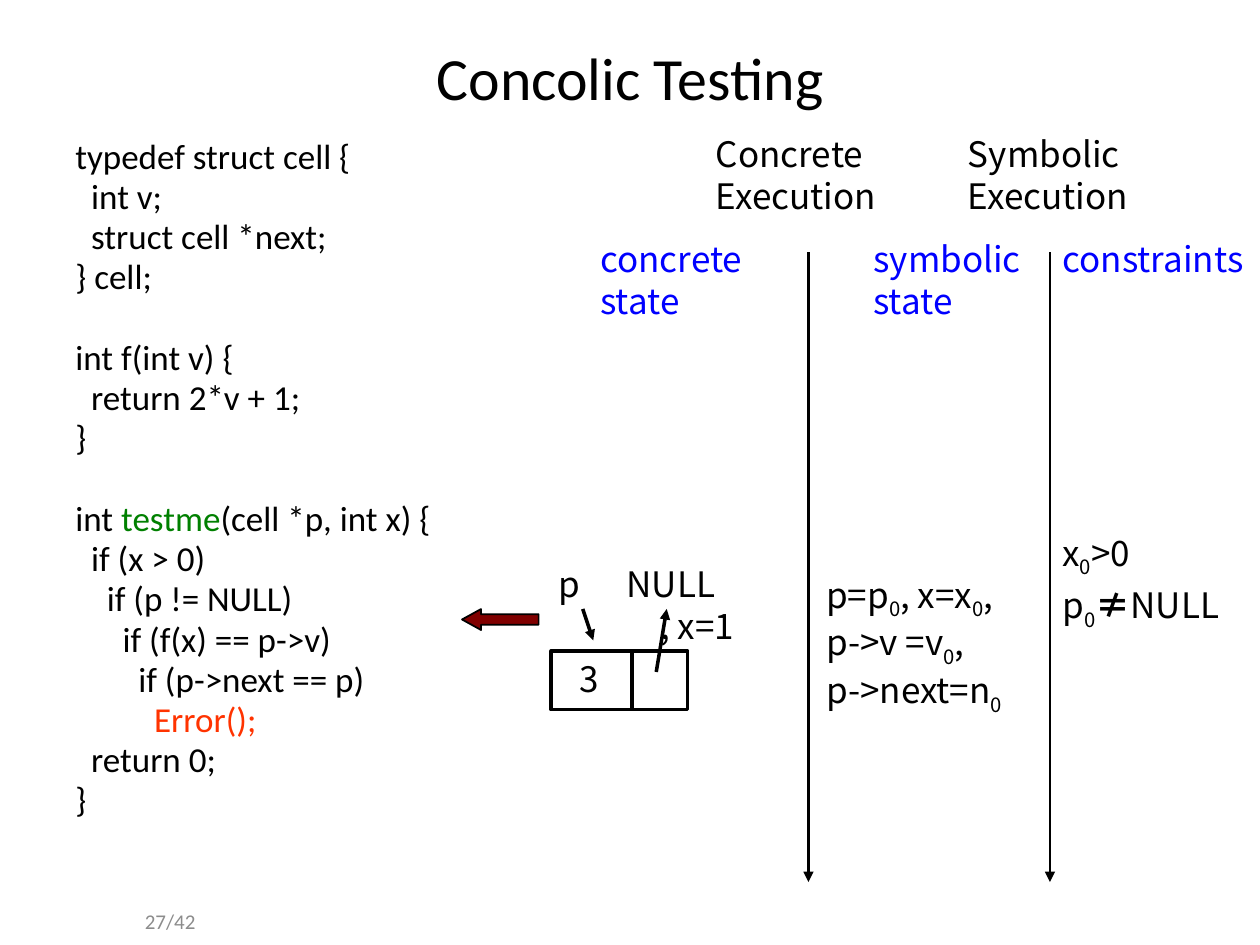
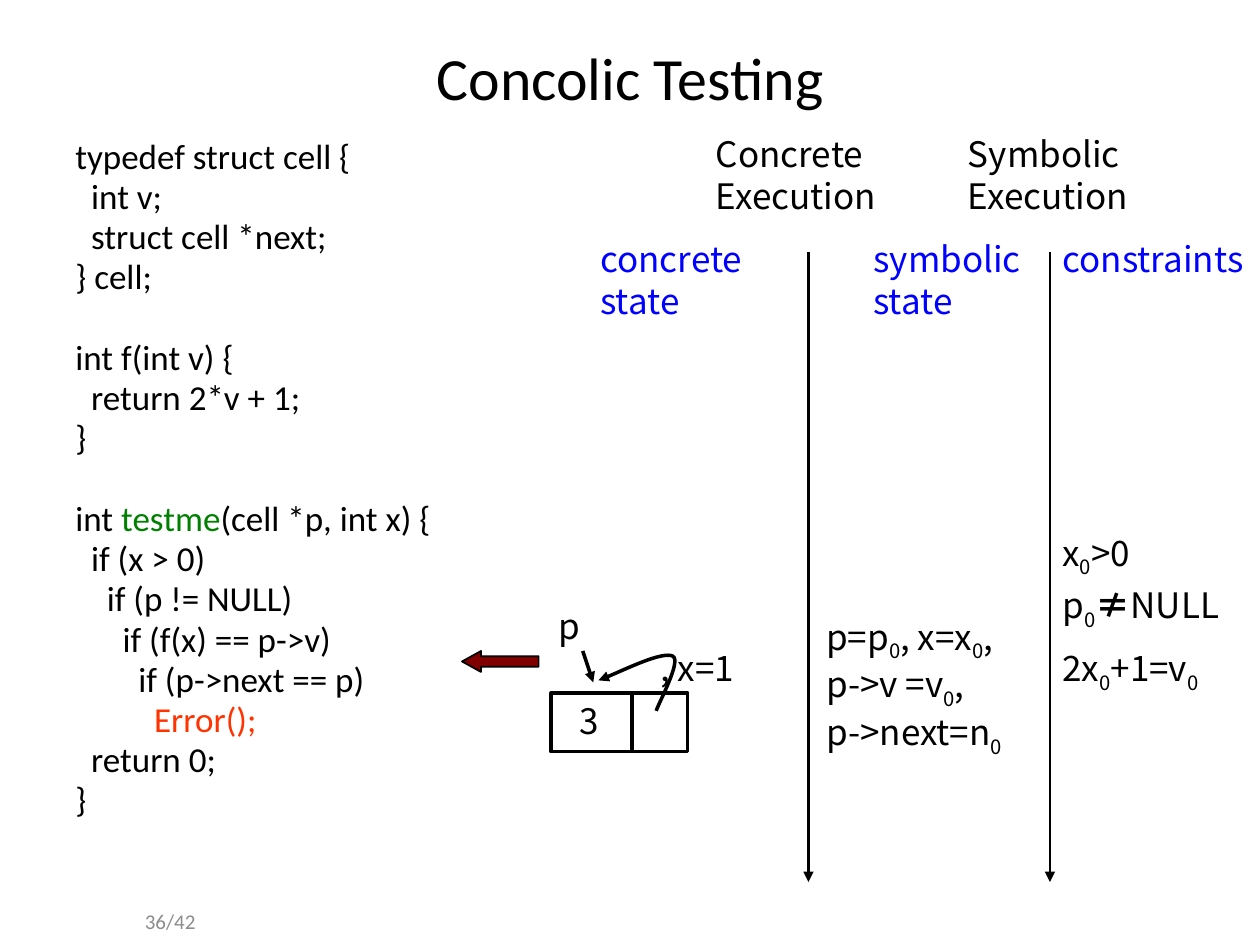
from pptx import Presentation
from pptx import util as u
from pptx.dml.color import RGBColor
from pptx.enum import shapes, text
from pptx.oxml import ns, xmlchemy

BLACK = RGBColor(0x00, 0x00, 0x00)
BLUE = RGBColor(0x00, 0x00, 0xFF)
GREEN = RGBColor(0x00, 0x80, 0x00)
RED = RGBColor(0xFF, 0x33, 0x00)
MAROON = RGBColor(0x80, 0x00, 0x00)
GREY = RGBColor(0x8C, 0x8C, 0x8C)

CODE_FONT = "Calibri"
STATE_FONT = "Noto Sans CJK KR"
WIDTH, HEIGHT = u.Inches(10), u.Inches(7.5)
COLUMNS, ROWS = 120, 90
ONE_LINE, TWO_LINES, THREE_LINES = 5.2, 9.2, 13.2
LINE_GAP, BLOCK_GAP = 3.7, 26.9
CODE_INDENT, STATE_INDENT = 1.5, 1.5

SUB_ZERO = ("0", {"baseline": -25000})
CODE_BLOCKS = [
    [(0, ["typedef struct cell {"]),
     (1, ["int v;"]),
     (1, ["struct cell *next;"]),
     (0, ["} cell;"])],
    [(0, ["int f(int v) {"]),
     (1, ["return 2*v + 1;"]),
     (0, ["}"])],
    [(0, ["int ", ("testme", {"color": GREEN}), "(cell *p, int x) {"]),
     (1, ["if (x > 0)"]),
     (2, ["if (p != NULL)"]),
     (3, ["if (f(x) == p->v)"]),
     (4, ["if (p->next == p)"]),
     (5, [("Error();", {"color": RED})]),
     (1, ["return 0;"]),
     (0, ["}"])],
]
SYMBOLIC_STATE = [
    ["p=p", SUB_ZERO, ", x=x", SUB_ZERO, ","],
    ["p->v =v", SUB_ZERO, ","],
    ["p->next=n", SUB_ZERO],
]
POSITIVE_X = (50, ["x", SUB_ZERO, ">0"])
NON_NULL_P = (55, ["p", SUB_ZERO, ("≠", {"bold": True}), "NULL"])
VALUE_MATCH = (61, ["2x", SUB_ZERO, "+1=v", SUB_ZERO])


def across(columns):
    return int(WIDTH * columns / COLUMNS)


def down(rows):
    return int(HEIGHT * rows / ROWS)


def cells(left, top, width, height):
    return across(left), down(top), across(width), down(height)


def write(paragraph, runs, font=STATE_FONT, size=20, color=BLACK, bold=False,
          baseline=None, align=text.PP_ALIGN.LEFT, indent=0, before=0, spacing=None):
    paragraph.alignment = align
    paragraph.space_before = u.Pt(before)
    paragraph.line_spacing = spacing
    properties = paragraph._p.get_or_add_pPr()
    properties.set("marL", str(across(indent)))
    properties.set("indent", "0")
    for item in runs:
        words, special = (item, {}) if isinstance(item, str) else item
        run = paragraph.add_run()
        run.text = words
        run.font.name = font
        run.font.size = u.Pt(size)
        run.font.bold = special.get("bold", bold)
        run.font.color.rgb = special.get("color", color)
        shift = special.get("baseline", baseline)
        if shift:
            run._r.get_or_add_rPr().set("baseline", str(shift))


def add_text(slide, box, lines, anchor=text.MSO_ANCHOR.TOP, **style):
    frame = slide.shapes.add_textbox(*cells(*box)).text_frame
    frame.word_wrap = True
    frame.vertical_anchor = anchor
    for number, runs in enumerate(lines):
        paragraph = frame.add_paragraph() if number else frame.paragraphs[0]
        write(paragraph, runs, **style)
    return frame


def draw_line(shape, width, arrow=False):
    shape.line.color.rgb = BLACK
    shape.line.width = u.Pt(width)
    if arrow:
        tail = xmlchemy.OxmlElement("a:tailEnd")
        tail.set("type", "triangle")
        shape.line._get_or_add_ln().append(tail)


def add_line(slide, start, end, width=2, arrow=True):
    line = slide.shapes.add_connector(
        shapes.MSO_CONNECTOR.STRAIGHT,
        across(start[0]), down(start[1]), across(end[0]), down(end[1]))
    draw_line(line, width, arrow)
    line._element.spPr.append(xmlchemy.OxmlElement("a:effectLst"))


def add_block(slide, kind, box, width, fill=None):
    shape = slide.shapes.add_shape(kind, *cells(*box))
    shape.shadow.inherit = False
    if fill is None:
        shape.fill.background()
    else:
        shape.fill.solid()
        shape.fill.fore_color.rgb = fill
    draw_line(shape, width)
    return shape


def add_curve(slide, points):
    corners = [(across(column), down(row)) for column, row in points]
    builder = slide.shapes.build_freeform(*corners[0])
    builder.add_line_segments(corners[1:], close=False)
    curve = builder.convert_to_shape()
    segments = list(curve._element.iter(ns.qn("a:lnTo")))
    for first in range(0, len(segments), 3):
        bezier = xmlchemy.OxmlElement("a:cubicBezTo")
        segments[first].addprevious(bezier)
        for segment in segments[first:first + 3]:
            bezier.append(segment[0])
            segment.getparent().remove(segment)
    curve.shadow.inherit = False
    curve.fill.background()
    draw_line(curve, 2, arrow=True)


def add_title(slide, words):
    title = slide.shapes.title
    title.left, title.top, title.width, title.height = cells(6, 3.6, 108, 7.3)
    title.text_frame.vertical_anchor = text.MSO_ANCHOR.MIDDLE
    write(title.text_frame.paragraphs[0], [words], font=CODE_FONT, size=34.2,
          align=text.PP_ALIGN.CENTER)


def add_code(slide):
    frame = add_text(slide, (6, 13, 53, 70), [])
    for block_number, block in enumerate(CODE_BLOCKS):
        for line_number, (level, runs) in enumerate(block):
            starts_code = block_number == line_number == 0
            starts_block = block_number > 0 and line_number == 0
            paragraph = frame.paragraphs[0] if starts_code else frame.add_paragraph()
            write(paragraph, runs, font=CODE_FONT, indent=level * CODE_INDENT,
                  before=BLOCK_GAP if starts_block else LINE_GAP, spacing=0.8)


def add_headings(slide):
    for column in (77, 100):
        add_line(slide, (column, 24), (column, 84), width=1.5)
    for column, words in ((67, "Concrete Execution"), (91, "Symbolic Execution")):
        add_text(slide, (column, 12, 20, TWO_LINES), [[words]])
    for column, width, words in ((56, 18, "concrete state"),
                                 (82, 18, "symbolic state"),
                                 (100, 20, "constraints")):
        add_text(slide, (column, 22, width, TWO_LINES), [[words]], color=BLUE)


def add_state(slide, row):
    add_text(slide, (77.5, row + 1, 23, THREE_LINES), SYMBOLIC_STATE)
    arrow = add_block(slide, shapes.MSO_SHAPE.LEFT_ARROW,
                      (44, row + 5, 7.3, 2), 1, MAROON)
    arrow.adjustments[0], arrow.adjustments[1] = 0.5, 0.91
    add_text(slide, (50.5, row, 10, ONE_LINE), [["p"]], indent=STATE_INDENT)
    add_text(slide, (61.7, row + 4, 16.8, ONE_LINE), [[", x=1"]])
    add_line(slide, (55.5, row + 5), (56.5, row + 8))
    cell = add_block(slide, shapes.MSO_SHAPE.RECTANGLE, (52.5, row + 9, 13, 5.6), 2)
    cell.text_frame.vertical_anchor = text.MSO_ANCHOR.TOP
    write(cell.text_frame.paragraphs[0], ["3"], indent=STATE_INDENT)
    add_line(slide, (60.2, row + 14.6), (60.2, row + 9), arrow=False)


def point_next_to_null(slide, row):
    add_line(slide, (62.5, row + 11), (63.5, row + 5))
    add_text(slide, (58.5, row, 12, ONE_LINE), [["NULL"]])


def point_next_to_itself(slide, row):
    offsets = [(62.5, 10.7), (62.8, 9.8), (64.9, 6), (64.1, 5.5),
               (63.1, 5), (58.4, 7.3), (57, 7.8)]
    add_curve(slide, [(column, row + offset) for column, offset in offsets])


def add_step(presentation, number, state_row, constraints, point_next):
    slide = presentation.slides.add_slide(presentation.slide_layouts[5])
    add_title(slide, "Concolic Testing")
    add_text(slide, (8, 85.3, 11.8, 4.8), [[number]], font=CODE_FONT, size=12,
             color=GREY, align=text.PP_ALIGN.RIGHT, anchor=text.MSO_ANCHOR.MIDDLE)
    add_code(slide)
    add_headings(slide)
    for row, runs in constraints:
        add_text(slide, (100, row, 20, ONE_LINE), [runs])
    add_state(slide, state_row)
    point_next(slide, state_row)


def main():
    presentation = Presentation()
    presentation.slide_width, presentation.slide_height = WIDTH, HEIGHT
    add_step(presentation, "27/42", 53, [POSITIVE_X, NON_NULL_P], point_next_to_null)
    add_step(presentation, "36/42", 57, [POSITIVE_X, NON_NULL_P, VALUE_MATCH],
             point_next_to_itself)
    presentation.save("out.pptx")


if __name__ == "__main__":
    main()
